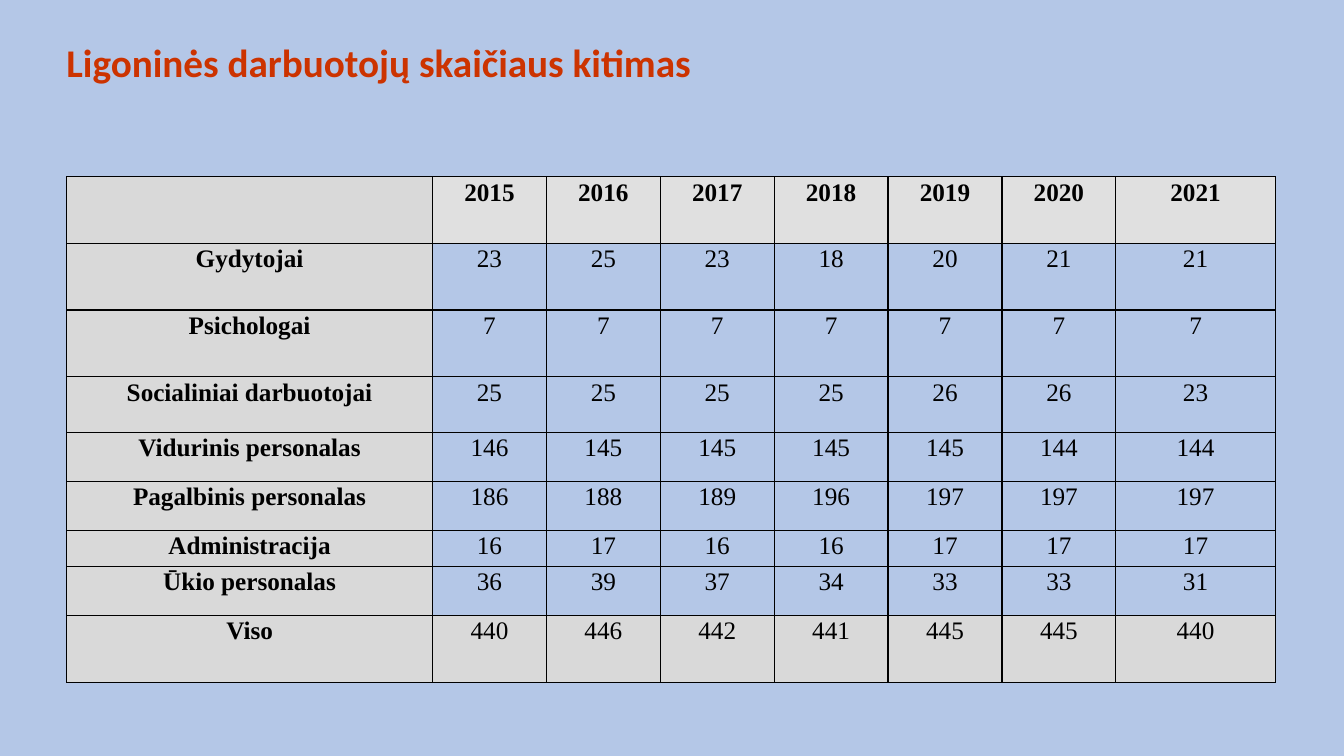
from pptx import Presentation
from pptx import util as u
from pptx.dml.color import RGBColor
from pptx.enum import text
from pptx.oxml import parse_xml
from pptx.oxml.ns import nsdecls

SKY = RGBColor(0xB4, 0xC7, 0xE7)
RUST = RGBColor(0xCC, 0x33, 0x00)
BLACK = RGBColor(0x00, 0x00, 0x00)
GREY = RGBColor(0xD9, 0xD9, 0xD9)
PALE_GREY = RGBColor(0xE0, 0xE0, 0xE0)

YEARS = ["", "2015", "2016", "2017", "2018", "2019", "2020", "2021"]
STAFF = [
    ("Gydytojai", 23, 25, 23, 18, 20, 21, 21),
    ("Psichologai", 7, 7, 7, 7, 7, 7, 7),
    ("Socialiniai darbuotojai", 25, 25, 25, 25, 26, 26, 23),
    ("Vidurinis personalas", 146, 145, 145, 145, 145, 144, 144),
    ("Pagalbinis personalas", 186, 188, 189, 196, 197, 197, 197),
    ("Administracija", 16, 17, 16, 16, 17, 17, 17),
    ("Ūkio personalas", 36, 39, 37, 34, 33, 33, 31),
    ("Viso", 440, 446, 442, 441, 445, 445, 440),
]
ROWS = [YEARS, *STAFF]
WIDTHS = [9.22] + [2.87] * 6 + [4.02]
HEIGHTS = [1.68, 1.68, 1.68, 1.4, 1.24, 1.24, 0.9, 1.24, 1.68]


def add_borders(cell):
    properties = cell._tc.get_or_add_tcPr()
    for side in ("lnL", "lnR", "lnT", "lnB"):
        properties.append(parse_xml(
            f'<a:{side} {nsdecls("a")} w="12700"><a:solidFill>'
            f'<a:srgbClr val="{BLACK}"/></a:solidFill></a:{side}>'))


prs = Presentation()
prs.slide_width, prs.slide_height = u.Cm(33.87), u.Cm(19.05)
slide = prs.slides.add_slide(prs.slide_layouts[5])
slide.background.fill.solid()
slide.background.fill.fore_color.rgb = SKY

title = slide.shapes.title
title.left, title.top = u.Cm(1.42), u.Cm(0.53)
title.width, title.height = u.Cm(30.48), u.Cm(2.21)
title.text_frame.vertical_anchor = text.MSO_ANCHOR.MIDDLE
heading = title.text_frame.paragraphs[0]
heading.alignment = text.PP_ALIGN.LEFT
heading.line_spacing = 0.9
heading_run = heading.add_run()
heading_run.text = "Ligoninės darbuotojų skaičiaus kitimas"
heading_run.font.name = "Calibri"
heading_run.font.size = u.Pt(28)
heading_run.font.bold = True
heading_run.font.color.rgb = RUST

headcount = slide.shapes.add_table(
    len(ROWS), len(YEARS), u.Cm(1.68), u.Cm(4.45),
    u.Cm(sum(WIDTHS)), u.Cm(sum(HEIGHTS))).table
headcount.horz_banding = False
for column, width in zip(headcount.columns, WIDTHS):
    column.width = u.Cm(width)

for r, (values, height) in enumerate(zip(ROWS, HEIGHTS)):
    headcount.rows[r].height = u.Cm(height)
    for c, value in enumerate(values):
        cell = headcount.cell(r, c)
        cell.margin_left = cell.margin_right = cell.margin_top = cell.margin_bottom = 0
        add_borders(cell)
        if c == 0 or r in (0, len(STAFF)):
            cell.fill.solid()
            cell.fill.fore_color.rgb = PALE_GREY if r == 0 and c > 0 else GREY
        else:
            cell.fill.background()
        if value == "":
            continue
        entry = cell.text_frame.paragraphs[0]
        entry.alignment = text.PP_ALIGN.CENTER
        entry.line_spacing = 1.07
        entry.space_after = u.Pt(8)
        run = entry.add_run()
        run.text = str(value)
        run.font.name = "Times New Roman"
        run.font.size = u.Pt(18)
        run.font.bold = r == 0 or c == 0
        run.font.color.rgb = BLACK

prs.save("out.pptx")
